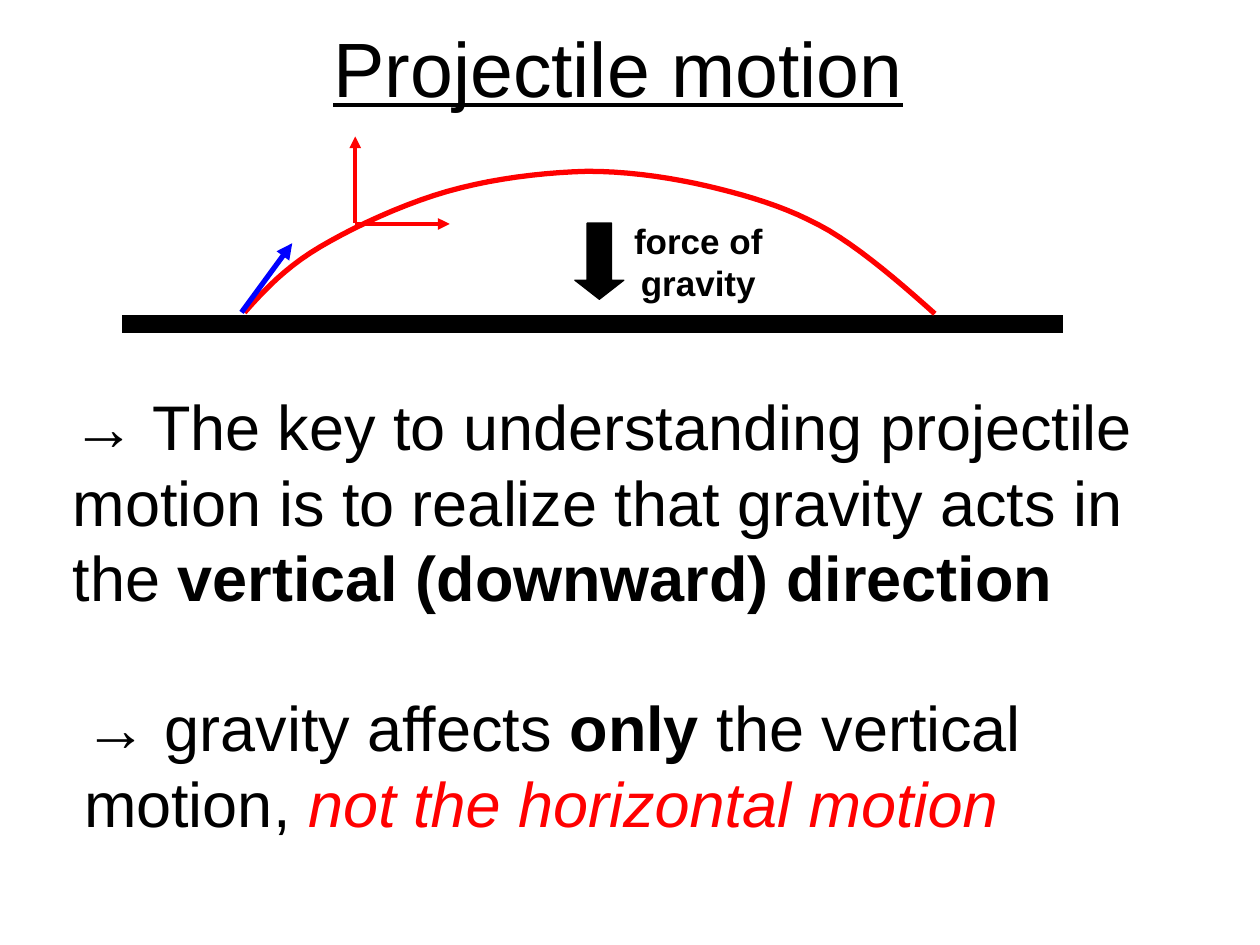
from pptx import Presentation
from pptx.dml.color import RGBColor
from pptx.enum.shapes import MSO_CONNECTOR as CONN, MSO_SHAPE as SHAPE
from pptx.enum.text import MSO_AUTO_SIZE as FIT, PP_ALIGN as ALIGN
from pptx.oxml.ns import qn
from pptx.util import Pt
from lxml.etree import SubElement

BLACK, RED, BLUE = "000000", "FF0000", "0000FF"


def rgb(value):
    return RGBColor.from_string(value)


def bezier(p0, p1, p2, p3, steps=10):
    for i in range(1, steps + 1):
        t = i / steps
        u = 1 - t
        yield tuple(
            Pt(u**3 * a + 3 * u * u * t * b + 3 * u * t * t * c + t**3 * d)
            for a, b, c, d in zip(p0, p1, p2, p3)
        )


class Drawing:
    font = "Arial"

    def __init__(self, slide):
        self.slide = slide
        self.shapes = slide.shapes

    def group(self):
        self.shapes = self.slide.shapes.add_group_shape().shapes

    def text(self, box, paragraphs, size, wrap=True, inset=None,
             align=ALIGN.LEFT, bold=None, underline=None):
        tf = self.shapes.add_textbox(*map(Pt, box)).text_frame
        tf.word_wrap = wrap
        tf.auto_size = FIT.SHAPE_TO_FIT_TEXT
        if inset is not None:
            tf.margin_left = tf.margin_right = Pt(inset)
            tf.margin_top = tf.margin_bottom = Pt(inset)
        for i, runs in enumerate(paragraphs):
            p = tf.add_paragraph() if i else tf.paragraphs[0]
            p.alignment = align
            p.font.name = self.font
            p.font.size = Pt(size)
            p.font.bold = bold
            p.font.underline = underline
            p.font.color.rgb = rgb(BLACK)
            for content, style in runs:
                r = p.add_run()
                r.text = content
                if style == "bold":
                    r.font.bold = True
                elif style == "warning":
                    r.font.italic = True
                    r.font.color.rgb = rgb(RED)

    def line(self, start, end, color, width, arrow=False):
        c = self.shapes.add_connector(CONN.STRAIGHT, *map(Pt, start + end))
        c.line.color.rgb = rgb(color)
        c.line.width = Pt(width)
        if arrow:
            SubElement(c.line._get_or_add_ln(), qn("a:tailEnd"), type="triangle")
        SubElement(c._element.spPr, qn("a:effectLst"))

    def down_arrow(self, box, head, color):
        sp = self.shapes.add_shape(SHAPE.DOWN_ARROW, *map(Pt, box))
        sp.adjustments[1] = head
        sp.shadow.inherit = False
        sp.fill.solid()
        sp.fill.fore_color.rgb = rgb(color)
        sp.line.color.rgb = rgb(color)
        sp.line.width = Pt(0.75)

    def curve(self, points, color, width):
        fb = self.shapes.build_freeform(*map(Pt, points[0]))
        vertices = []
        for i in range(0, len(points) - 1, 3):
            vertices.extend(bezier(*points[i:i + 4]))
        fb.add_line_segments(vertices, close=False)
        sp = fb.convert_to_shape()
        sp.shadow.inherit = False
        sp.fill.background()
        sp.line.color.rgb = rgb(color)
        sp.line.width = Pt(width)


def main():
    prs = Presentation()
    prs.slide_width, prs.slide_height = Pt(720), Pt(540)
    s = Drawing(prs.slides.add_slide(prs.slide_layouts[6]))

    s.text((34.5, 218, 668, 138), [[
        ("→ The key to understanding projectile motion is to realize "
         "that gravity acts in the ", None),
        ("vertical (downward) direction", "bold"),
    ]], 36)
    s.text((41, 390, 628, 94.5), [[
        ("→ gravity affects ", None),
        ("only", "bold"),
        (" the vertical motion, ", None),
        ("not the horizontal motion", "warning"),
    ]], 36)
    s.text((183.5, 8, 343.5, 60.5), [[("Projectile motion", None)]], 44,
           wrap=False, underline=True)

    s.group()
    s.line((70, 185), (607.5, 185), BLACK, 10.25)
    s.line((203, 127.5), (203, 78), RED, 2.25, arrow=True)
    s.down_arrow((328.5, 127.5, 28, 43.5), 0.389, BLACK)
    s.text((356.5, 125.5, 85, 48),
           [[("force of", None)], [("gravity", None)]], 20,
           inset=0, align=ALIGN.CENTER, bold=True)
    trajectory = [
        (139.7, 178.6), (151.2, 165.6), (163.4, 152.6), (182.9, 141.1),
        (202.3, 129.6), (230.4, 116.6), (255.6, 109.4), (280.8, 102.2),
        (309.6, 98.6), (335.5, 97.9), (361.4, 97.9), (388.1, 102.2),
        (411.1, 108), (434.2, 113.8), (453.6, 120.2), (473.8, 131.8),
        (493.9, 144), (514.1, 161.3), (534.2, 179.3),
    ]
    s.curve(trajectory, RED, 3)
    s.line((203, 128), (257, 128), RED, 2.25, arrow=True)
    s.line((138, 178.5), (167, 139), BLUE, 3, arrow=True)

    prs.save("out.pptx")


if __name__ == "__main__":
    main()
